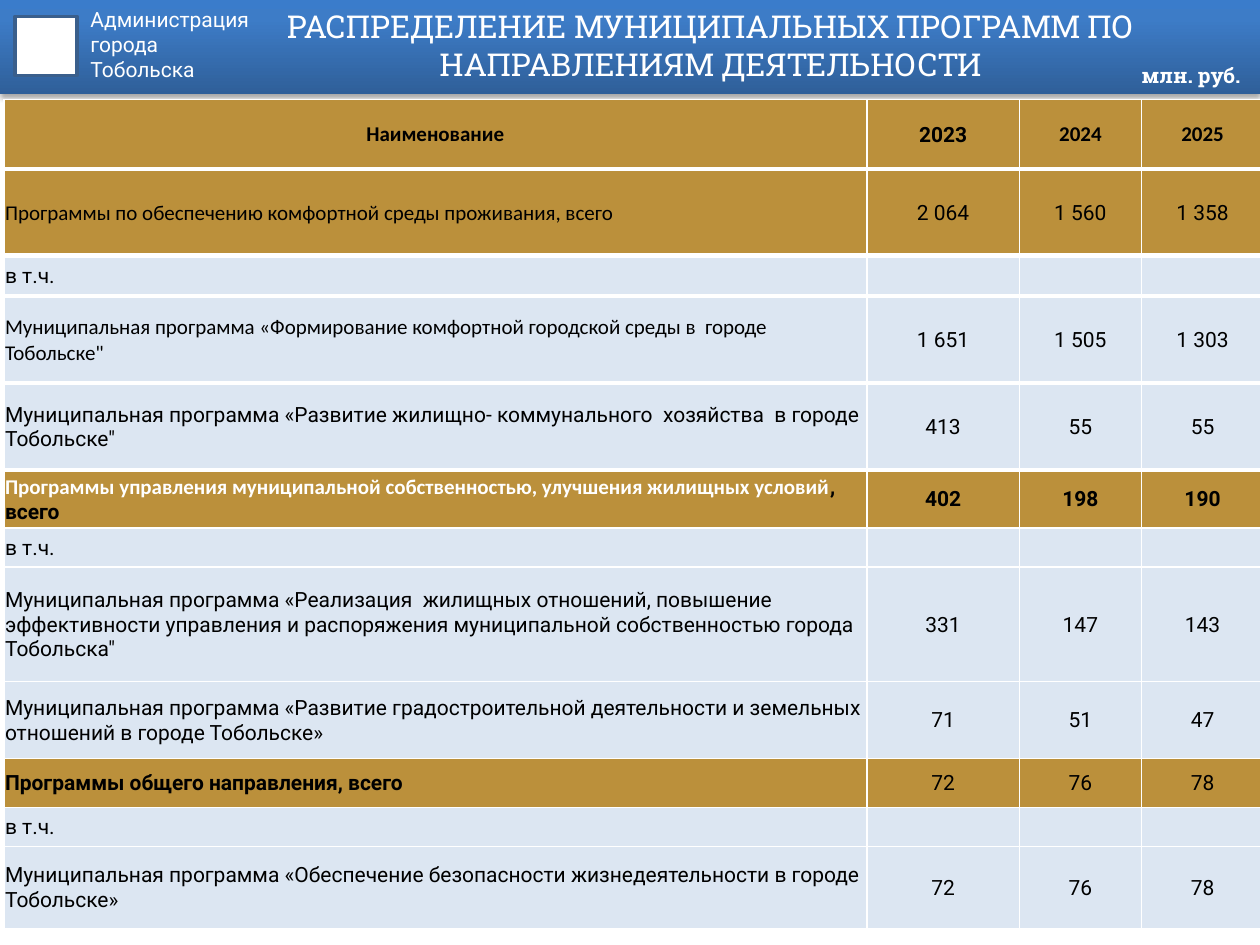
"""Build the slide on municipal programmes by line of activity."""
from copy import deepcopy

from lxml.etree import SubElement
from pptx import Presentation
from pptx.dml.color import RGBColor
from pptx.enum.shapes import MSO_SHAPE
from pptx.enum.text import MSO_ANCHOR, MSO_AUTO_SIZE, PP_ALIGN
from pptx.oxml import parse_xml
from pptx.oxml.ns import nsdecls, qn
from pptx.util import Inches, Pt

COLORS = {
    "white": "FFFFFF", "black": "000000", "gold": "BB903B", "pale": "DCE6F2",
    "frame": "3A5F8C", "deep": "2F5F99", "middle": "3D7CC7", "bright": "3A7CCB",
}


def color(name):
    return RGBColor.from_string(COLORS[name])


def add_span(para, text, tone="black", **formats):
    span = para.add_run()
    span.text = text
    span.font.color.rgb = color(tone)
    for name, value in ({"size": Pt(12), "name": "Roboto", "bold": False} | formats).items():
        setattr(span.font, name, value)


deck = Presentation()
deck.slide_width, deck.slide_height = Inches(10), Inches(7.5)
page = deck.slides.add_slide(deck.slide_layouts[6])

banner = page.shapes.add_shape(MSO_SHAPE.RECTANGLE, 0, 0, Inches(10), Inches(0.75))
banner.line.fill.background()
banner.fill.gradient()
banner.fill.gradient_angle = 90
stop_list = banner._element.spPr.find(qn("a:gradFill")).find(qn("a:gsLst"))
stop_list.append(deepcopy(stop_list[-1]))
gradient = [(0, "deep"), (0.8, "middle"), (1, "bright")]
for stop, (position, tone) in zip(banner.fill.gradient_stops, gradient):
    stop.position = position
    stop.color.rgb = color(tone)
banner._element.spPr.append(parse_xml(
    f'<a:effectLst {nsdecls("a")}><a:outerShdw blurRad="{Pt(3.1)}" dist="{Pt(1.8)}" '
    f'dir="5400000" rotWithShape="0"><a:srgbClr val="{COLORS["black"]}">'
    '<a:alpha val="35000"/></a:srgbClr></a:outerShdw></a:effectLst>'))

emblem = page.shapes.add_shape(
    MSO_SHAPE.RECTANGLE, Inches(0.12), Inches(0.13), Inches(0.49), Inches(0.47))
emblem.shadow.inherit = False
emblem.fill.solid()
emblem.fill.fore_color.rgb = color("white")
emblem.line.color.rgb = color("frame")
emblem.line.width = Pt(2)

title = "РАСПРЕДЕЛЕНИЕ МУНИЦИПАЛЬНЫХ ПРОГРАММ ПО НАПРАВЛЕНИЯМ ДЕЯТЕЛЬНОСТИ"
captions = [
    ((0.62, 0, 2.34, 0.91), ["Администрация", "города", "Тобольска"], {}, {}, {}),
    ((2.03, 0, 7.22, 0.71), [title], {"vertical_anchor": MSO_ANCHOR.MIDDLE},
     {"alignment": PP_ALIGN.CENTER}, {"size": Pt(18), "name": "Roboto Slab"}),
    ((8.96, 0.45, 0.98, 0.3), ["млн. руб."],
     {"margin_right": 0, "auto_size": MSO_AUTO_SIZE.SHAPE_TO_FIT_TEXT}, {},
     {"name": "Roboto Slab", "bold": True}),
]
for place, lines, frame_formats, para_formats, font_formats in captions:
    box = page.shapes.add_textbox(*map(Inches, place))
    frame = box.text_frame
    for name, value in ({"word_wrap": True} | frame_formats).items():
        setattr(frame, name, value)
    for index, line in enumerate(lines):
        para = frame.add_paragraph() if index else frame.paragraphs[0]
        for name, value in para_formats.items():
            setattr(para, name, value)
        add_span(para, line, "white", **font_formats)

calibri = {"name": "Calibri"}
bold = {"bold": True}
calibri_bold = calibri | bold
including = (0.31, "pale", [("в т.ч.", {})], [""] * 3, {})
rows = [
    (0.55, "gold", [("Наименование", calibri_bold)], ["2023", "2024", "2025"], bold),
    (0.69, "gold", [("Программы по обеспечению комфортной среды проживания, всего", calibri)],
     ["2 064", "1 560", "1 358"], {}),
    (0.32, *including[1:]),
    (0.69, "pale", [("Муниципальная программа «Формирование комфортной городской среды "
                     "в  городе Тобольске\"", calibri)], ["1 651", "1 505", "1 303"], {}),
    (0.69, "pale", [("Муниципальная программа «Развитие жилищно- коммунального  хозяйства  "
                     "в городе Тобольске\"", {})], ["413", "55", "55"], {}),
    (0.46, "gold", [("Программы управления муниципальной собственностью, улучшения жилищных "
                     "условий", calibri_bold | {"tone": "white"}), (", всего", bold)],
     ["402", "198", "190"], bold),
    including,
    (0.91, "pale", [("Муниципальная программа «Реализация  жилищных отношений, повышение "
                     "эффективности управления и распоряжения муниципальной собственностью "
                     "города Тобольска\"", {})], ["331", "147", "143"], {}),
    (0.61, "pale", [("Муниципальная программа «Развитие градостроительной деятельности и "
                     "земельных отношений в городе Тобольске»", {})], ["71", "51", "47"], {}),
    (0.39, "gold", [("Программы общего направления, всего", bold)], ["72", "76", "78"], {}),
    including,
    (0.65, "pale", [("Муниципальная программа «Обеспечение безопасности жизнедеятельности "
                     "в городе Тобольске»", {})], ["72", "76", "78"], {}),
]
column_widths = [6.85, 1.21, 0.97, 0.97]
table = page.shapes.add_table(
    len(rows), len(column_widths), Inches(0.03), Inches(0.79), Inches(10), Inches(6.58)).table
for column, width in zip(table.columns, column_widths):
    column.width = Inches(width)
cell_formats = {
    "vertical_anchor": MSO_ANCHOR.MIDDLE, "margin_left": Inches(0.01),
    "margin_top": Inches(0.01), "margin_right": Inches(0.01), "margin_bottom": 0,
}
for row_index, (height, tone, label, values, value_formats) in enumerate(rows):
    table.rows[row_index].height = Inches(height)
    borders = {"lnL": 1, "lnR": 1, "lnT": 3 if 1 <= row_index <= 5 else 1,
               "lnB": 3 if row_index <= 4 else 1}
    contents = [label] + [[(value, value_formats)] for value in values]
    for column_index, spans in enumerate(contents):
        cell = table.cell(row_index, column_index)
        for name, value in cell_formats.items():
            setattr(cell, name, value)
        properties = cell._tc.get_or_add_tcPr()
        for side, width in borders.items():
            edge = SubElement(properties, qn(f"a:{side}"), w=str(Pt(width)))
            edge_fill = SubElement(edge, qn("a:solidFill"))
            SubElement(edge_fill, qn("a:srgbClr"), val=COLORS["white"])
        cell.fill.solid()
        cell.fill.fore_color.rgb = color(tone)
        para = cell.text_frame.paragraphs[0]
        if column_index or row_index == 0:
            para.alignment = PP_ALIGN.CENTER
        for text, formats in spans:
            if text:
                year_font = calibri if row_index == 0 and column_index > 1 else {}
                add_span(para, text, **(formats | year_font))
            else:
                SubElement(para._p, qn("a:endParaRPr"), sz="1200")

deck.save("out.pptx")
